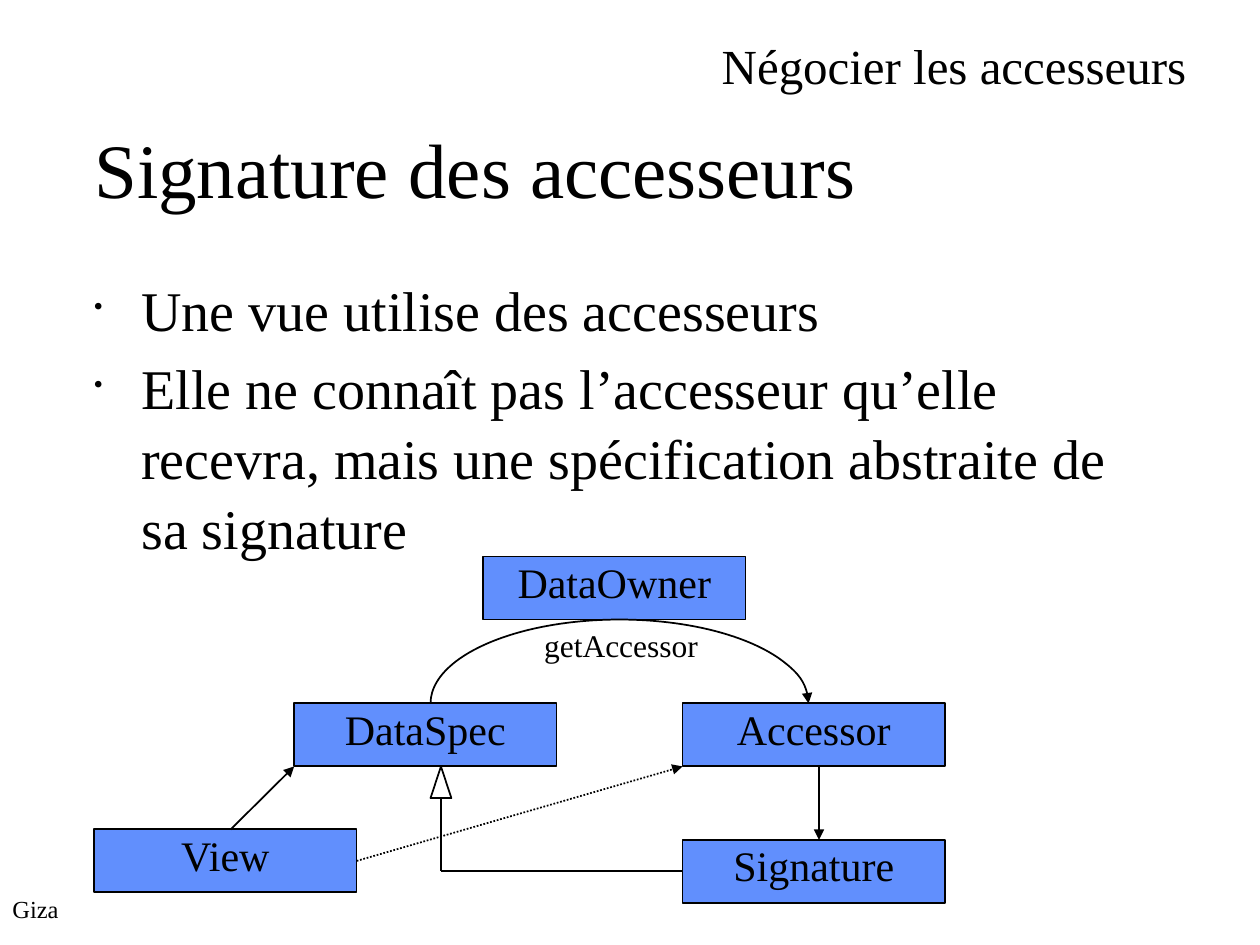
from lxml.etree import SubElement
from pptx import Presentation
from pptx.dml.color import RGBColor
from pptx.enum.dml import MSO_LINE
from pptx.enum.shapes import MSO_CONNECTOR, MSO_SHAPE
from pptx.enum.text import MSO_ANCHOR, PP_ALIGN
from pptx.oxml.ns import qn
from pptx.util import Cm, Pt

THEME = {
    "font": "Times New Roman",
    "ink": RGBColor(0x00, 0x00, 0x00),
    "box": RGBColor(0x61, 0x8F, 0xFD),
    "line": Pt(1),
    "title": Pt(44), "body": Pt(32), "section": Pt(28),
    "node": Pt(24), "label": Pt(18), "footer": Pt(14),
}

# All positions and sizes are in centimetres.
TITLE = ("Signature des accesseurs", (1.9, 2.33, 21.6, 2.12))
BULLETS = [
    "Une vue utilise des accesseurs",
    "Elle ne connaît pas l’accesseur qu’elle recevra, "
    "mais une spécification abstraite de sa signature",
]
BULLET_AREA = (1.9, 5.5, 21.6, 6.15)
TEXTS = [
    ("Giza", (0.25, 18.02, 1.45, 0.83), "footer"),
    ("Négocier les accesseurs", (14.55, 0.72, 9.88, 1.45), "section"),
    ("getAccessor", (10.97, 12.63, 3.6, 1.02), "label"),
]
NODE_WIDTH, NODE_HEIGHT = 5.29, 1.27
NODES = {
    "DataOwner": (9.74, 11.22),
    "Accessor": (13.76, 14.18),
    "DataSpec": (5.93, 14.18),
    "View": (1.9, 16.72),
    "Signature": (13.76, 16.93),
}
INHERIT_X = 8.89
TRIANGLE_WIDTH, TRIANGLE_HEIGHT = 0.42, 0.64
ARC_LEFT, ARC_RIGHT = 8.68, 16.3


def node_point(name, across, down):
    """Return the point of a node at the given fractions of its width and height."""
    left, top = NODES[name]
    return left + across * NODE_WIDTH, top + down * NODE_HEIGHT


def apply_format(target, values):
    for name, value in values.items():
        setattr(target, name, value)


def write(shape, lines, size, align=PP_ALIGN.LEFT, anchor=MSO_ANCHOR.TOP):
    frame = shape.text_frame
    apply_format(frame, {
        "text": "\n".join(lines), "word_wrap": True, "vertical_anchor": anchor,
        "margin_left": 0, "margin_right": 0, "margin_top": 0, "margin_bottom": 0,
    })
    for paragraph in frame.paragraphs:
        paragraph.alignment = align
        apply_format(paragraph.font, {"name": THEME["font"], "size": THEME[size]})
        paragraph.font.color.rgb = THEME["ink"]
    return frame.paragraphs


def add_text(slide, area, lines, size):
    return write(slide.shapes.add_textbox(*map(Cm, area)), lines, size)


def add_bullets(slide):
    for paragraph in add_text(slide, BULLET_AREA, BULLETS, "body"):
        apply_format(paragraph, {"space_before": Pt(4.8), "line_spacing": 1.04})
        properties = paragraph._p.get_or_add_pPr()
        properties.set("marL", str(Cm(0.95)))
        properties.set("indent", str(Cm(-0.95)))
        SubElement(properties, qn("a:buSzPct"), val="45000")
        SubElement(properties, qn("a:buChar"), char="•")


def set_line(shape, arrow=False):
    shape.line.color.rgb = THEME["ink"]
    shape.line.width = THEME["line"]
    if arrow:
        SubElement(shape.line._get_or_add_ln(), qn("a:tailEnd"), type="triangle")


def add_outline(slide, kind, area, fill=None):
    shape = slide.shapes.add_shape(kind, *map(Cm, area))
    shape.shadow.inherit = False
    if fill is None:
        shape.fill.background()
    else:
        shape.fill.solid()
        shape.fill.fore_color.rgb = fill
    return shape


def add_link(slide, start, end, arrow=True, dotted=False):
    link = slide.shapes.add_connector(MSO_CONNECTOR.STRAIGHT, *map(Cm, start + end))
    if dotted:
        link.line.dash_style = MSO_LINE.ROUND_DOT
    set_line(link, arrow)
    SubElement(link._element.spPr, qn("a:effectLst"))


def add_nodes(slide):
    for name, position in NODES.items():
        area = (*position, NODE_WIDTH, NODE_HEIGHT)
        node = add_outline(slide, MSO_SHAPE.RECTANGLE, area, THEME["box"])
        set_line(node)
        write(node, [name], "node", PP_ALIGN.CENTER)


def add_relations(slide):
    owner_bottom = node_point("DataOwner", 0.5, 1)[1]
    row_top, row_bottom = (node_point("DataSpec", 0, down)[1] for down in (0, 1))

    arc_area = (ARC_LEFT, owner_bottom, ARC_RIGHT - ARC_LEFT, 2 * (row_top - owner_bottom))
    arc = add_outline(slide, MSO_SHAPE.ARC, arc_area)
    arc.adjustments[0], arc.adjustments[1] = 108, 0  # upper half of the ellipse
    set_line(arc, arrow=True)

    triangle_area = (INHERIT_X - TRIANGLE_WIDTH / 2, row_bottom, TRIANGLE_WIDTH, TRIANGLE_HEIGHT)
    set_line(add_outline(slide, MSO_SHAPE.ISOSCELES_TRIANGLE, triangle_area))

    signature_side = node_point("Signature", 0, 0.5)
    corner = (INHERIT_X, signature_side[1])
    add_link(slide, (INHERIT_X, row_bottom + TRIANGLE_HEIGHT), corner, arrow=False)
    add_link(slide, corner, signature_side, arrow=False)

    add_link(slide, node_point("View", 0.52, 0), node_point("DataSpec", 0, 1))
    add_link(slide, node_point("View", 1, 0.5), node_point("Accessor", 0, 1), dotted=True)
    add_link(slide, node_point("Accessor", 0.52, 1), node_point("Signature", 0.52, 0))


def main():
    presentation = Presentation()
    presentation.slide_width, presentation.slide_height = Cm(25.4), Cm(19.05)
    slide = presentation.slides.add_slide(presentation.slide_layouts[5])

    title, area = TITLE
    placeholder = slide.shapes.title
    apply_format(placeholder, dict(zip(("left", "top", "width", "height"), map(Cm, area))))
    write(placeholder, [title], "title", anchor=MSO_ANCHOR.MIDDLE)

    add_bullets(slide)
    for text, area, size in TEXTS:
        add_text(slide, area, [text], size)
    add_nodes(slide)
    add_relations(slide)
    presentation.save("out.pptx")


if __name__ == "__main__":
    main()
